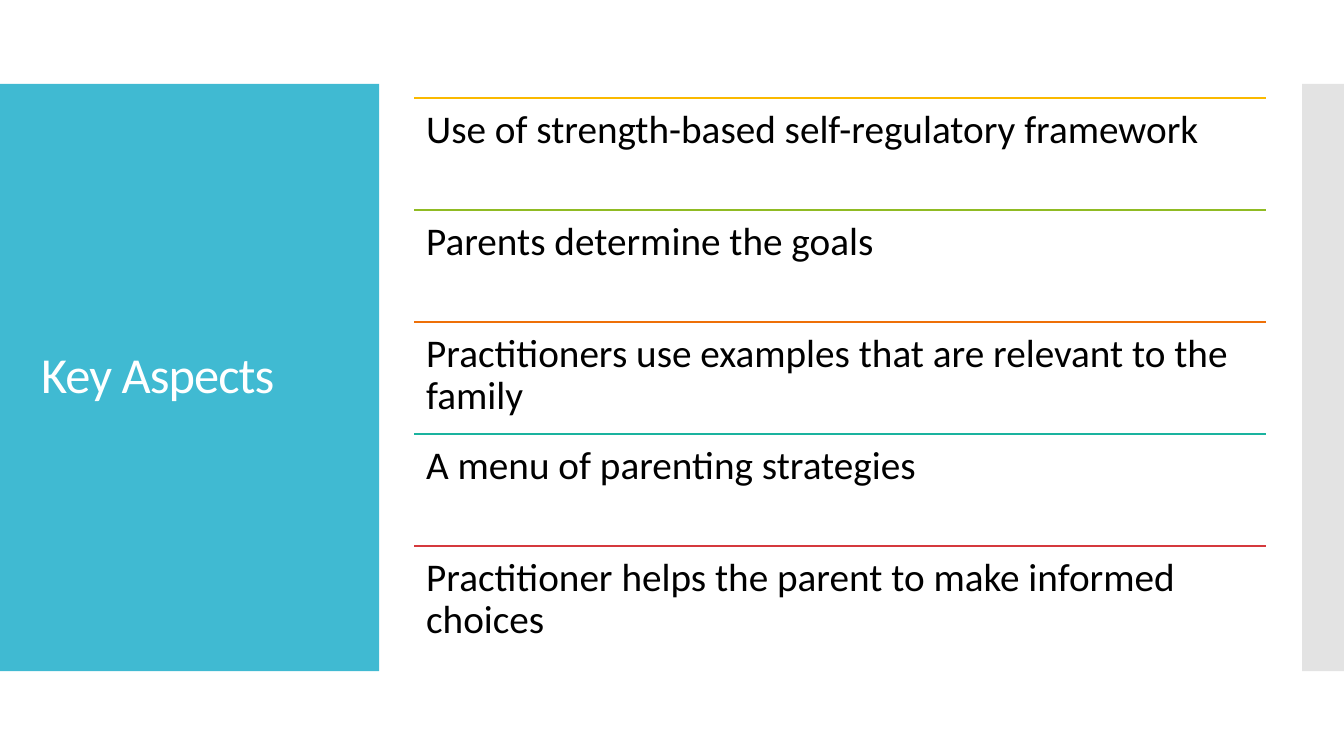
from pptx import Presentation
from pptx.dml.color import RGBColor
from pptx.enum.shapes import MSO_CONNECTOR, MSO_SHAPE
from pptx.enum.text import MSO_ANCHOR
from pptx.oxml.ns import qn
from pptx.util import Pt
from lxml import etree

FONT = "Calibri"
PANEL_TOP, PANEL_HEIGHT = 45, 314.6
ROW_LEFT, ROW_TOP, ROW_WIDTH, ROW_HEIGHT = 222, 52.4, 456.3, 60
ASPECTS = [
    ("FAB900", "Use of strength-based self-regulatory framework"),
    ("90BB23", "Parents determine the goals"),
    ("EE7008", "Practitioners use examples that are relevant to the family"),
    ("1AB39F", "A menu of parenting strategies"),
    ("D5393D", "Practitioner helps the parent to make informed choices"),
]


def color(hex_code):
    return RGBColor.from_string(hex_code)


def add_panel(slide, left, width, fill, opacity=100):
    panel = slide.shapes.add_shape(
        MSO_SHAPE.RECTANGLE, Pt(left), Pt(PANEL_TOP), Pt(width), Pt(PANEL_HEIGHT))
    panel.shadow.inherit = False
    panel.line.fill.background()
    panel.fill.solid()
    panel.fill.fore_color.rgb = color(fill)
    if opacity < 100:
        rgb = panel.fill._xPr.find(qn("a:solidFill")).find(qn("a:srgbClr"))
        etree.SubElement(rgb, qn("a:alpha"), val=str(opacity * 1000))


def add_rule(slide, top, stroke):
    rule = slide.shapes.add_connector(
        MSO_CONNECTOR.STRAIGHT, Pt(ROW_LEFT), Pt(top), Pt(ROW_LEFT + ROW_WIDTH), Pt(top))
    rule.line.color.rgb = color(stroke)
    rule.line.width = Pt(0.85)
    etree.SubElement(rule._element.spPr, qn("a:effectLst"))


def add_text(slide, box, text, size, fill, inset, anchor=MSO_ANCHOR.TOP):
    frame = slide.shapes.add_textbox(*map(Pt, box)).text_frame
    frame.word_wrap = True
    frame.vertical_anchor = anchor
    frame.margin_left = frame.margin_right = Pt(inset)
    frame.margin_top = frame.margin_bottom = Pt(inset)
    paragraph = frame.paragraphs[0]
    paragraph.line_spacing = 0.9
    run = paragraph.add_run()
    run.text = text
    run.font.name = FONT
    run.font.size = Pt(size)
    run.font.color.rgb = color(fill)
    return run


def main():
    deck = Presentation()
    deck.slide_width, deck.slide_height = Pt(720), Pt(405)
    slide = deck.slides.add_slide(deck.slide_layouts[6])

    add_panel(slide, 0, 203.2, "40BAD2")
    add_panel(slide, 697.6, 22.4, "C8C8C8", opacity=50)
    title = add_text(slide, (15, 66.4, 174.4, 271.4), "Key Aspects", 27, "FFFFFF",
                     inset=7.2, anchor=MSO_ANCHOR.MIDDLE)
    title.font._element.set("spc", "-50")

    for row, (stroke, aspect) in enumerate(ASPECTS):
        top = ROW_TOP + row * ROW_HEIGHT
        add_rule(slide, top, stroke)
        add_text(slide, (ROW_LEFT, top, ROW_WIDTH, ROW_HEIGHT), aspect, 21, "000000",
                 inset=6.3)

    deck.save("out.pptx")


if __name__ == "__main__":
    main()
